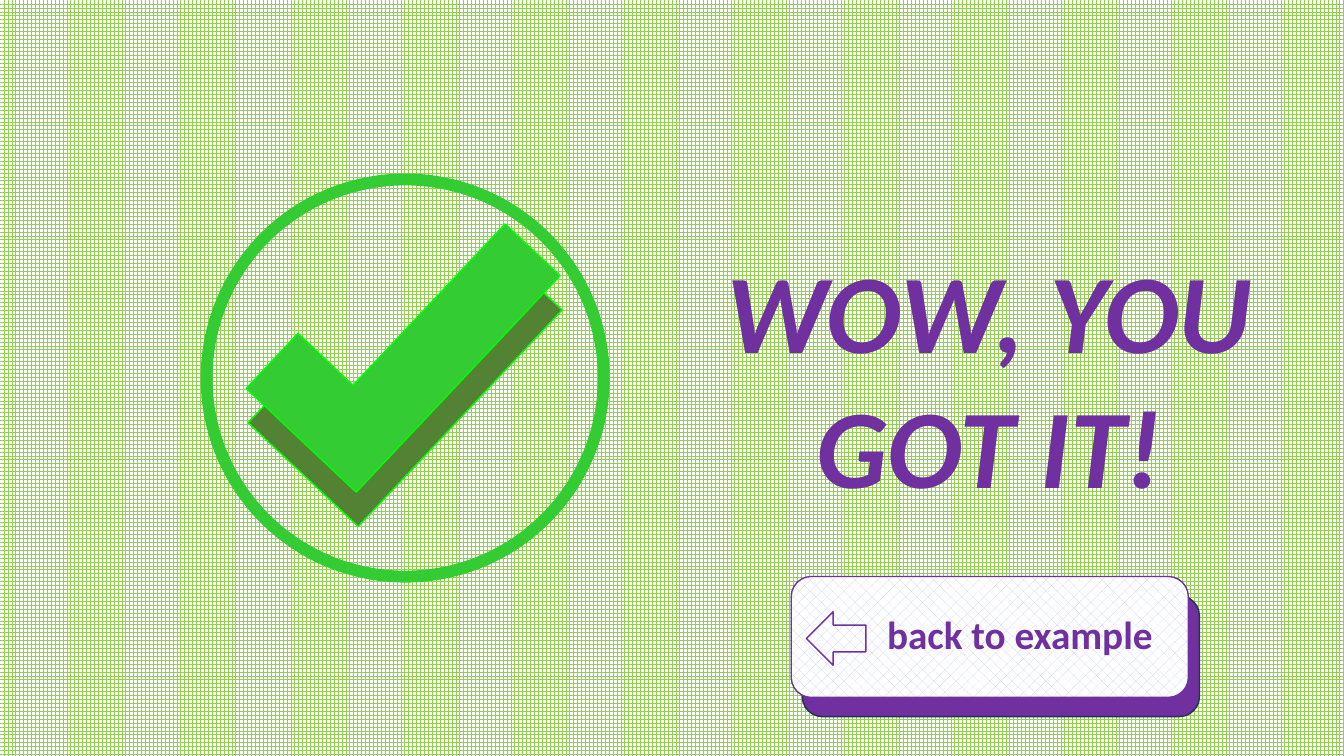
from lxml import etree
from pptx import Presentation
from pptx.dml.color import RGBColor
from pptx.enum.dml import MSO_PATTERN
from pptx.enum.shapes import MSO_SHAPE
from pptx.enum.text import MSO_ANCHOR, MSO_AUTO_SIZE, PP_ALIGN
from pptx.oxml.ns import qn
from pptx.util import Pt

LARGE_GRID = MSO_PATTERN.LARGE_GRID
DOTS = MSO_PATTERN.PERCENT_25
ROUNDED = MSO_SHAPE.ROUNDED_RECTANGLE
CORNER = MSO_SHAPE.CORNER
CIRCLE = MSO_SHAPE.FLOWCHART_CONNECTOR
ARROW = MSO_SHAPE.LEFT_ARROW
CENTER = PP_ALIGN.CENTER

# Content: all places are left, top, width, height in points
PRAISE = ["WOW, YOU", "GOT IT!"]
BUTTON_TEXT = "back to example"
FONT = "Calibri"
PURPLE, GREEN, LIME, WHITE = "7030A0", "33CC33", "00FF00", "FFFFFF"
PRAISE_PLACE = (509.8, 169.2, 393.8, 200.9)
CIRCLE_PLACE = (147.6, 128.2, 283.7, 283.7)
BUTTON_PLACE = (565.2, 411.8, 283.7, 86.4)
ARROW_PLACE = (576, 437, 42.5, 38.2)
CHECK_PLACE = (234, 131, 108, 212.4)
BUTTON_SHADOW = (7.9, 13.7)
CHECK_SHADOW = (1.4, 24.5)


def color(value):
    return RGBColor.from_string(value)


def shifted(place, offset):
    left, top, width, height = place
    return left + offset[0], top + offset[1], width, height


def set_pattern(fill, pattern, front):
    fill.patterned()
    fill.pattern = pattern
    fill.fore_color.rgb = color(front)
    fill.back_color.rgb = color(WHITE)


def add_part(kind, place, line, fill=None, weight=1):
    shape = slide.shapes.add_shape(kind, *map(Pt, place))
    shape.shadow.inherit = False
    shape.line.color.rgb = color(line)
    shape.line.width = Pt(weight)
    if fill:
        shape.fill.solid()
        shape.fill.fore_color.rgb = color(fill)
    else:
        shape.fill.background()
    return shape


def add_check(place, fill):
    check = add_part(CORNER, place, LIME, fill)
    check.rotation = 43.3
    check._element.spPr.find(qn("a:xfrm")).set("flipH", "1")


def format_text(para, size, italic=False):
    para.alignment = CENTER
    for span in para.runs:
        span.font.name = FONT
        span.font.size = Pt(size)
        span.font.bold = True
        span.font.italic = italic
        span.font.color.rgb = color(PURPLE)


def outline_text(span):
    line = etree.Element(qn("a:ln"), w=str(Pt(1)))
    fill = etree.SubElement(line, qn("a:solidFill"))
    etree.SubElement(fill, qn("a:srgbClr"), val=PURPLE)
    span.font._element.insert(0, line)


deck = Presentation()
deck.slide_width, deck.slide_height = Pt(960), Pt(540)
slide = deck.slides.add_slide(deck.slide_layouts[5])
set_pattern(slide.background.fill, LARGE_GRID, "92D050")

# Praise in the title
title = slide.shapes.title
title.left, title.top, title.width, title.height = map(Pt, PRAISE_PLACE)
frame = title.text_frame
frame.text = "\n".join(PRAISE)
frame.word_wrap = False
frame.auto_size = MSO_AUTO_SIZE.SHAPE_TO_FIT_TEXT
frame.vertical_anchor = MSO_ANCHOR.TOP
for para in frame.paragraphs:
    format_text(para, 80, italic=True)
    outline_text(para.runs[0])

# Circled check mark with its dark shadow
add_check(shifted(CHECK_PLACE, CHECK_SHADOW), "548235")
add_part(CIRCLE, CIRCLE_PLACE, GREEN, weight=8.5)
add_check(CHECK_PLACE, GREEN)

# Button with its shadow, label and arrow
add_part(ROUNDED, shifted(BUTTON_PLACE, BUTTON_SHADOW), "1E3256", PURPLE)
button = add_part(ROUNDED, BUTTON_PLACE, PURPLE)
set_pattern(button.fill, DOTS, "CCCCFF")
frame = button.text_frame
frame.text = BUTTON_TEXT
frame.word_wrap = True
frame.margin_left = Pt(50)
frame.vertical_anchor = MSO_ANCHOR.MIDDLE
label = frame.paragraphs[0]
label.line_spacing = 0.9
label.space_before = Pt(10)
format_text(label, 28)
add_part(ARROW, ARROW_PLACE, PURPLE)

deck.save("out.pptx")
